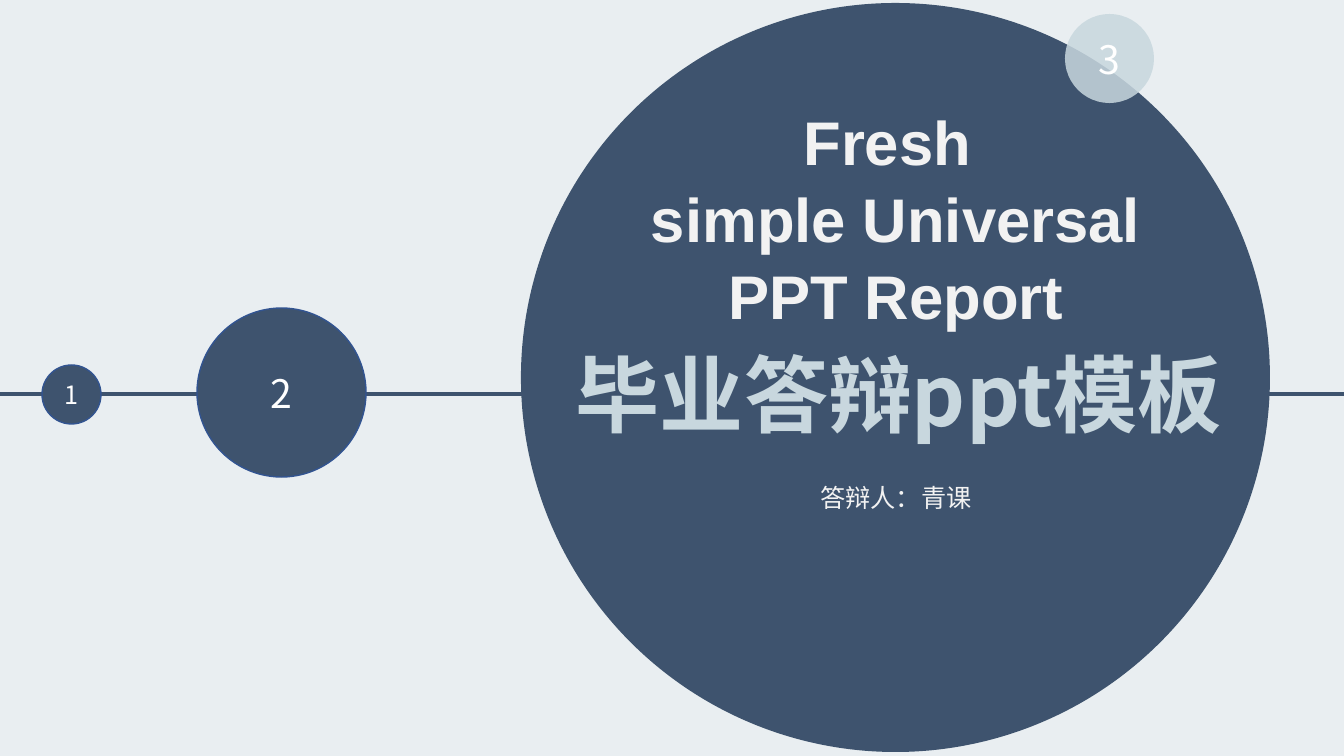
from lxml import etree
from pptx import Presentation
from pptx import util as u
from pptx.dml.color import RGBColor
from pptx.enum import shapes, text
from pptx.oxml.ns import qn

WIDTH, HEIGHT = 1344, 756
SCALE = u.Inches(7.5) / HEIGHT
NAVY, EDGE, MIST, PALE, WHITE = "3E536E", "325491", "C8D7DE", "F2F2F2", "FFFFFF"
SANS, LATIN = "Noto Sans CJK SC", "Arial"
CENTER, LEFT = text.PP_ALIGN.CENTER, text.PP_ALIGN.LEFT
TOP, MIDDLE, BOTTOM = (text.MSO_ANCHOR.TOP, text.MSO_ANCHOR.MIDDLE,
                       text.MSO_ANCHOR.BOTTOM)


def px(*lengths):
    return [round(length * SCALE) for length in lengths]


def color(value):
    return RGBColor.from_string(value)


def write(shape, lines, size, ink, font=SANS, bold=False, align=CENTER,
          anchor=TOP, spacing=1.0):
    frame = shape.text_frame
    frame.text = "\n".join(lines)
    margin_x, margin_y = px(10, 5)
    frame_format = {"word_wrap": True, "vertical_anchor": anchor,
                    "auto_size": text.MSO_AUTO_SIZE.NONE,
                    "margin_left": margin_x, "margin_right": margin_x,
                    "margin_top": margin_y, "margin_bottom": margin_y}
    for name, value in frame_format.items():
        setattr(frame, name, value)
    for para in frame.paragraphs:
        para_format = {"alignment": align, "line_spacing": spacing,
                       "space_before": u.Pt(0)}
        for name, value in para_format.items():
            setattr(para, name, value)
        for span in para.runs:
            span_format = {"size": u.Pt(size), "bold": bold, "name": font}
            for name, value in span_format.items():
                setattr(span.font, name, value)
            span.font.color.rgb = color(ink)
            etree.SubElement(span.font._element, qn("a:ea"), typeface=font)


def add_circle(page, left, top, diameter, fill, edge=None, opacity=100):
    circle = page.shapes.add_shape(shapes.MSO_SHAPE.OVAL,
                                   *px(left, top, diameter, diameter))
    circle.shadow.inherit = False
    circle.fill.solid()
    circle.fill.fore_color.rgb = color(fill)
    if opacity < 100:
        tint = circle.element.spPr.find(".//" + qn("a:srgbClr"))
        etree.SubElement(tint, qn("a:alpha"), val=str(opacity * 1000))
    if edge:
        circle.line.color.rgb = color(edge)
        circle.line.width = u.Pt(1)
    else:
        circle.line.fill.background()
    return circle


def add_badge(page, left, top, diameter, number, size, **look):
    badge = add_circle(page, left, top, diameter, **look)
    write(badge, [number], size, WHITE, anchor=MIDDLE)


def add_axis(page, start, end, middle):
    axis = page.shapes.add_connector(shapes.MSO_CONNECTOR.STRAIGHT,
                                     *px(start, middle, end, middle))
    axis.line.color.rgb = color(NAVY)
    axis.line.width = u.Pt(3)
    etree.SubElement(axis.element.spPr, qn("a:effectLst"))


def add_cover_text(page, left, top):
    """Place the heading, title and speaker relative to the large circle."""
    heading = page.shapes.add_textbox(*px(left + 27, top + 100, 696, 234))
    write(heading, ["Fresh ", "simple Universal", "PPT Report"], 44, PALE,
          font=LATIN, bold=True, anchor=BOTTOM, spacing=1.04)

    title = page.shapes.title
    title.left, title.top, title.width, title.height = px(
        left + 45, top + 334, 732, 112)
    write(title, ["毕业答辩ppt模板"], 60, MIST, bold=True, align=LEFT)
    title.element.getparent().append(title.element)

    speaker = page.shapes.add_textbox(*px(left + 246, top + 474, 258, 40))
    write(speaker, ["答辩人：青课"], 18, PALE)


def add_cover(deck):
    page = deck.slides.add_slide(deck.slide_layouts[5])
    page.background.fill.solid()
    page.background.fill.fore_color.rgb = color("E9EEF1")
    left, top, diameter = 521, 3, 749
    add_circle(page, left, top, diameter, NAVY)
    add_badge(page, left + 544, top + 11, 89, "3", 28, fill=MIST, opacity=85)
    add_axis(page, -18, WIDTH, 394)
    add_cover_text(page, left, top)
    add_badge(page, 197, 308, 169, "2", 28, fill=NAVY, edge=EDGE)
    add_badge(page, 42, 365, 59, "1", 18, fill=NAVY, edge=EDGE)


def main():
    deck = Presentation()
    deck.slide_width, deck.slide_height = px(WIDTH, HEIGHT)
    add_cover(deck)
    deck.save("out.pptx")


if __name__ == "__main__":
    main()
